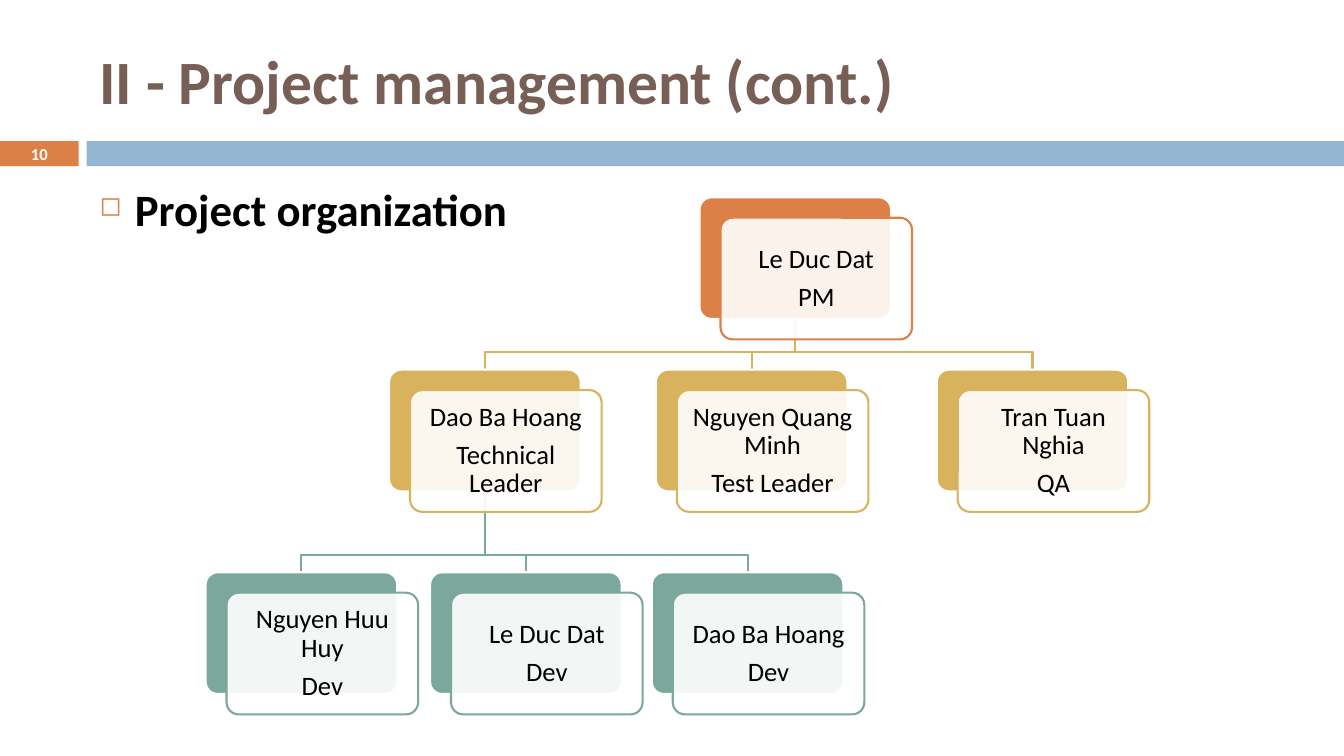
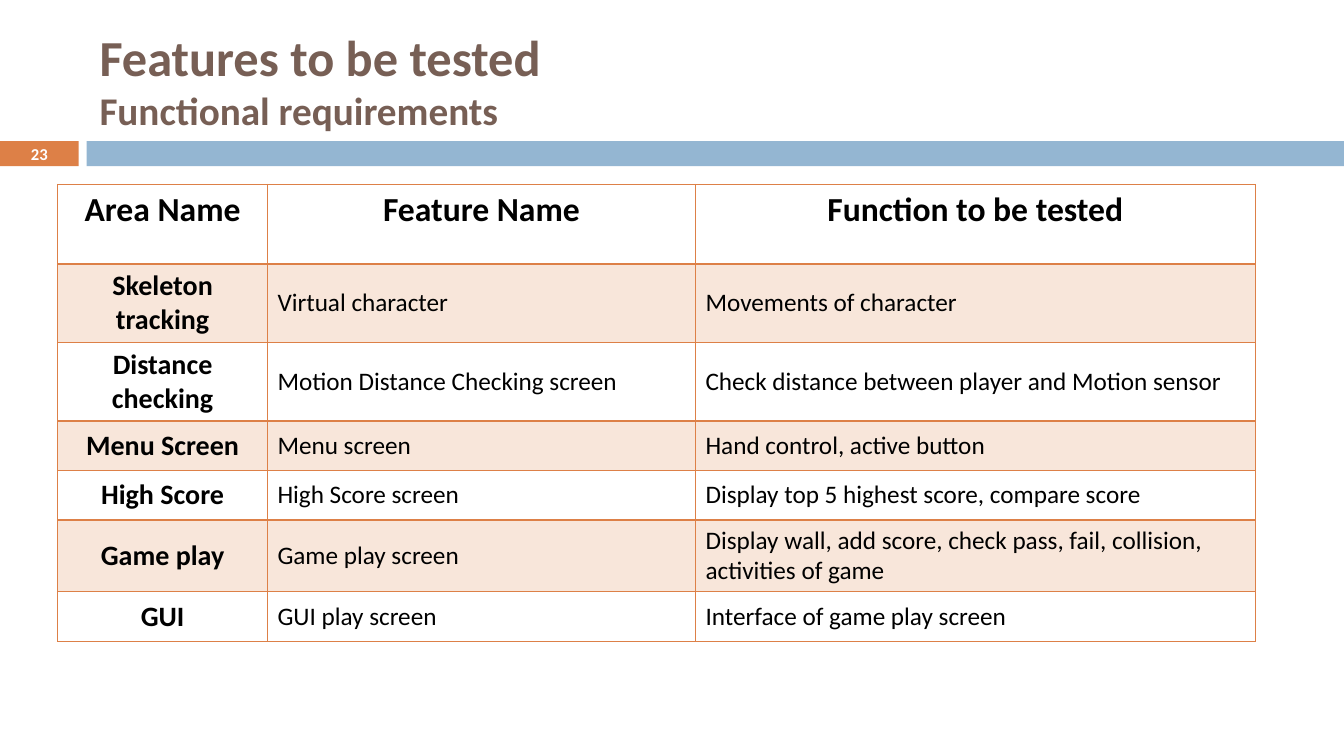
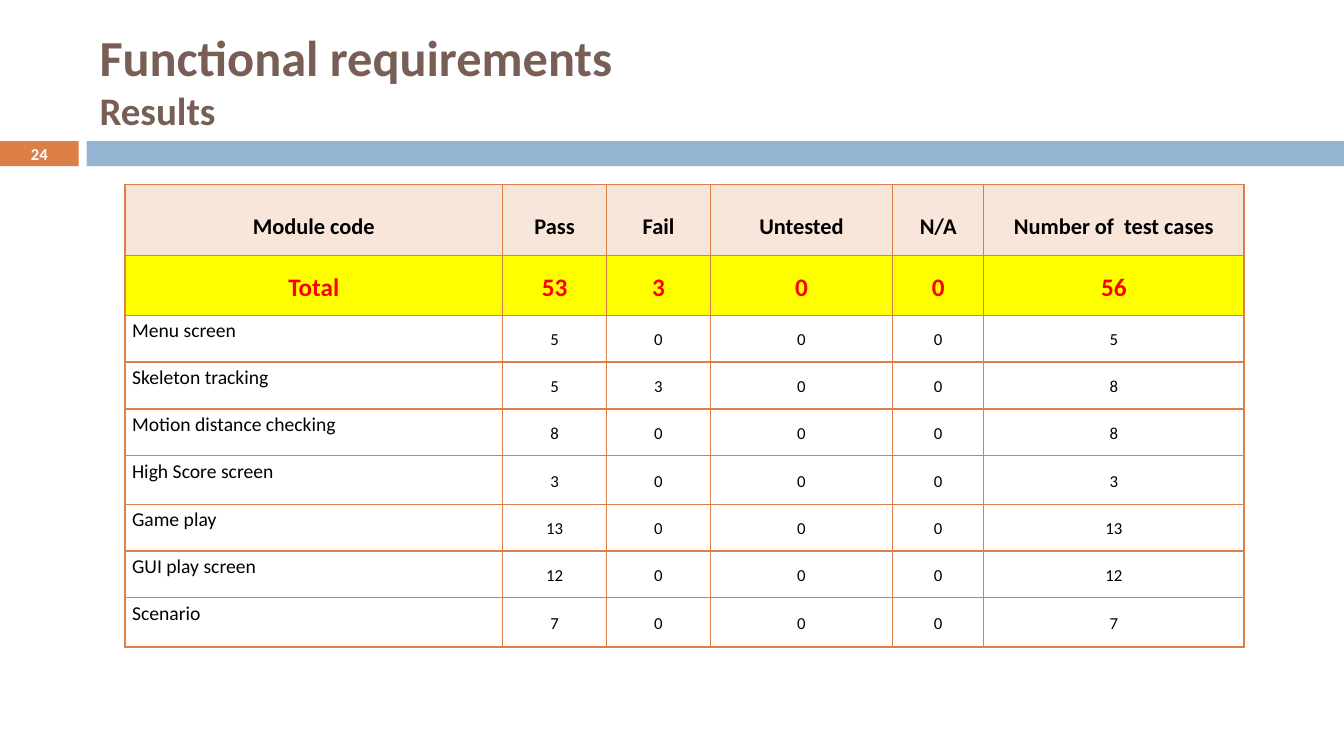
from lxml.etree import SubElement
from pptx import Presentation
from pptx.dml.color import RGBColor
from pptx.enum.shapes import MSO_SHAPE as Preset
from pptx.enum.text import MSO_ANCHOR as Anchor, PP_ALIGN as Align
from pptx.oxml.ns import qn
from pptx.util import Inches, Pt

WIDTH, HEIGHT = Inches(13.33), Inches(7.5)
FONT = "Calibri"
COLORS = {
    "accent": "DD8047", "band": "94B6D2", "title": "775F55", "gold": "D8B25C",
    "green": "7BA79D", "white": "FFFFFF", "black": "000000", "peach": "F8E6DA",
    "yellow": "FFFF00", "red": "FF0000",
}

TITLE_LEFT, TITLE_WIDTH = 6.67, 89.2
BAND_TOP, BAND_HEIGHT = 18.67, 3.33
BADGE_WIDTH, BAND_LEFT = 5.85, 6.45
TABLE_TOP = 24.4

CARD_WIDTH, CARD_HEIGHT = 14.25, 16.1
CARD_SHIFT_X, CARD_SHIFT_Y = 1.56, 2.7
LINK_DROP = 2.3
LEVELS = [(26.1, "accent"), (48.9, "gold"), (75.7, "green")]
MEMBERS = [
    ("Le Duc Dat", "PM", 0, 52.05, None),
    ("Dao Ba Hoang", "Technical Leader", 1, 28.95, 0),
    ("Nguyen Quang Minh", "Test Leader", 1, 48.8, 0),
    ("Tran Tuan Nghia", "QA", 1, 69.7, 0),
    ("Nguyen Huu Huy", "Dev", 2, 15.3, 1),
    ("Le Duc Dat", "Dev", 2, 32, 1),
    ("Dao Ba Hoang", "Dev", 2, 48.5, 1),
]

FEATURES = [
    ("Area Name", "Feature Name", "Function to be tested"),
    ("Skeleton tracking", "Virtual character", "Movements of character"),
    ("Distance checking", "Motion Distance Checking screen",
     "Check distance between player and Motion sensor"),
    ("Menu Screen", "Menu screen", "Hand control, active button"),
    ("High Score", "High Score screen", "Display top 5 highest score, compare score"),
    ("Game play", "Game play screen",
     "Display wall, add score, check pass, fail, collision, activities of game"),
    ("GUI", "GUI play screen", "Interface of game play screen"),
]
RESULTS = [
    ("Module code", "Pass", "Fail", "Untested", "N/A", "Number of  test cases"),
    ("Total", 53, 3, 0, 0, 56),
    ("Menu screen", 5, 0, 0, 0, 5),
    ("Skeleton tracking", 5, 3, 0, 0, 8),
    ("Motion distance checking", 8, 0, 0, 0, 8),
    ("High Score screen", 3, 0, 0, 0, 3),
    ("Game play", 13, 0, 0, 0, 13),
    ("GUI play screen", 12, 0, 0, 0, 12),
    ("Scenario", 7, 0, 0, 0, 7),
]


def across(percent):
    return round(WIDTH * percent / 100)


def down(percent):
    return round(HEIGHT * percent / 100)


def area(left, top, width, height):
    return across(left), down(top), across(width), down(height)


def rgb(name):
    return RGBColor.from_string(COLORS[name])


def style_run(run, size, color="black", bold=False):
    run.font.name = FONT
    run.font.size = Pt(size)
    run.font.bold = bold
    run.font.color.rgb = rgb(color)


def add_box(slide, preset, place, fill, line=None):
    box = slide.shapes.add_shape(preset, *area(*place))
    box.shadow.inherit = False
    box.fill.solid()
    box.fill.fore_color.rgb = rgb(fill)
    if line:
        box.line.color.rgb = rgb(line)
        box.line.width = Pt(1.5)
    else:
        box.line.fill.background()
    return box


def add_text(slide, place, text, sizes, color, anchor=Anchor.TOP, align=Align.LEFT):
    frame = slide.shapes.add_textbox(*area(*place)).text_frame
    frame.word_wrap = True
    frame.vertical_anchor = anchor
    paragraph = frame.paragraphs[0]
    paragraph.text = text
    paragraph.alignment = align
    for run, size in zip(paragraph.runs, sizes):
        style_run(run, size, color, bold=True)
    return paragraph


def add_page(deck, number, title, sizes):
    slide = deck.slides.add_slide(deck.slide_layouts[6])
    add_box(slide, Preset.RECTANGLE, (0, BAND_TOP, BADGE_WIDTH, BAND_HEIGHT), "accent")
    add_box(slide, Preset.RECTANGLE,
            (BAND_LEFT, BAND_TOP, 100 - BAND_LEFT, BAND_HEIGHT), "band")
    add_text(slide, (TITLE_LEFT, 3.33, TITLE_WIDTH, 14.4), title, sizes, "title",
             Anchor.MIDDLE)
    add_text(slide, (0, 18.5, BADGE_WIDTH, 3.6), str(number), [11.9], "white",
             Anchor.MIDDLE, Align.CENTER)
    return slide


def add_bullet(slide, text):
    paragraph = add_text(slide, (TITLE_LEFT, 23.33, TITLE_WIDTH, 65.6), text, [32], "black")
    paragraph.space_before = Pt(7)
    props = paragraph._p.get_or_add_pPr()
    props.set("marL", str(Inches(0.35)))
    props.set("indent", str(-Inches(0.35)))
    tint = SubElement(props, qn("a:buClr"))
    SubElement(tint, qn("a:srgbClr"), val=COLORS["accent"])
    SubElement(props, qn("a:buSzPct"), val="60000")
    SubElement(props, qn("a:buChar"), char="◻")


def add_link(slide, parent, child):
    start_x, end_x = (across(member[3] + CARD_WIDTH / 2) for member in (parent, child))
    start_y = down(LEVELS[parent[2]][0] + CARD_HEIGHT)
    top, color = LEVELS[child[2]]
    joint = down(top - LINK_DROP)
    outline = slide.shapes.build_freeform(start_x, start_y)
    outline.add_line_segments(
        [(start_x, joint), (end_x, joint), (end_x, down(top))], close=False)
    link = outline.convert_to_shape()
    link.shadow.inherit = False
    link.fill.background()
    link.line.color.rgb = rgb(color)
    link.line.width = Pt(1.5)


def add_card(slide, member):
    name, role, level, left, _ = member
    top, color = LEVELS[level]
    back = add_box(slide, Preset.ROUNDED_RECTANGLE,
                   (left, top, CARD_WIDTH, CARD_HEIGHT), color, "white")
    front = add_box(slide, Preset.ROUNDED_RECTANGLE,
                    (left + CARD_SHIFT_X, top + CARD_SHIFT_Y, CARD_WIDTH, CARD_HEIGHT),
                    "white", color)
    for card in (back, front):
        card.adjustments[0] = 0.1
    tint = front._element.spPr.find(qn("a:solidFill"))[0]
    SubElement(tint, qn("a:alpha"), val="90000")
    frame = front.text_frame
    frame.word_wrap = True
    frame.vertical_anchor = Anchor.MIDDLE
    frame.margin_left = frame.margin_right = Inches(0.08)
    frame.margin_top = frame.margin_bottom = Inches(0.08)
    frame.text = f"{name}\n{role}"
    for paragraph in frame.paragraphs:
        paragraph.alignment = Align.CENTER
        paragraph.line_spacing = 0.9
        paragraph.space_after = Pt(6.65)
        style_run(paragraph.runs[0], 19)


def add_borders(cell, bottom):
    props = cell._tc.get_or_add_tcPr()
    for side, points in (("L", 1), ("R", 1), ("T", 1), ("B", bottom)):
        edge = SubElement(props, qn(f"a:ln{side}"), w=str(Pt(points)))
        fill = SubElement(edge, qn("a:solidFill"))
        SubElement(fill, qn("a:srgbClr"), val=COLORS["accent"])


def fill_cell(cell, value, size, color="black", bold=False, fill=None, align=Align.CENTER,
              anchor=Anchor.MIDDLE, spacing=None, tight=False, bottom=1):
    add_borders(cell, bottom)
    if fill:
        cell.fill.solid()
        cell.fill.fore_color.rgb = rgb(fill)
    else:
        cell.fill.background()
    if tight:
        cell.margin_left = cell.margin_right = Inches(0.07)
        cell.margin_top = cell.margin_bottom = 0
    cell.vertical_anchor = anchor
    paragraph = cell.text_frame.paragraphs[0]
    paragraph.text = str(value)
    paragraph.alignment = align
    if spacing:
        paragraph.line_spacing = spacing
    style_run(paragraph.runs[0], size, color, bold)


def add_grid(slide, left, columns, rows, content, cell_style):
    place = area(left, TABLE_TOP, sum(columns), sum(rows))
    table = slide.shapes.add_table(len(rows), len(columns), *place).table
    table.first_row = table.horz_banding = False
    for column, width in zip(table.columns, columns):
        column.width = across(width)
    for row, height in zip(table.rows, rows):
        row.height = down(height)
    for r, values in enumerate(content):
        for c, value in enumerate(values):
            fill_cell(table.cell(r, c), value, **cell_style(r, c))


def feature_style(row, column):
    if row == 0:
        return dict(size=24, bold=True, anchor=Anchor.TOP, bottom=2)
    fill = "peach" if row % 2 else None
    if column == 0:
        return dict(size=20, bold=True, fill=fill)
    return dict(size=18, fill=fill, align=Align.LEFT)


def result_style(row, column):
    if row == 0:
        return dict(size=16, bold=True, fill="peach", spacing=1.5, tight=True)
    shared = dict(spacing=1.15, tight=True)
    if row == 1:
        return dict(size=18, color="red", bold=True, fill="yellow", **shared)
    if column == 0:
        return dict(size=14, align=Align.LEFT, anchor=Anchor.TOP, **shared)
    return dict(size=12, **shared)


def main():
    deck = Presentation()
    deck.slide_width, deck.slide_height = WIDTH, HEIGHT

    organization = add_page(deck, 10, "II - Project management (cont.)", [44])
    add_bullet(organization, "Project organization")
    for member in MEMBERS:
        if member[4] is not None:
            add_link(organization, MEMBERS[member[4]], member)
    for member in MEMBERS:
        add_card(organization, member)

    features = add_page(deck, 23, "Features to be tested\vFunctional requirements", [36, 28])
    add_grid(features, 4.3, [15.6, 31.85, 41.65],
             [10.5, 10.4, 10.4, 6.55, 6.55, 9.5, 6.55], FEATURES, feature_style)

    results = add_page(deck, 24, "Functional requirements\vResults", [36, 27.9])
    add_grid(results, 9.3, [28.1, 7.73, 7.73, 13.55, 6.8, 19.35],
             [9.4, 7.9, 6.2, 6.2, 6.2, 6.4, 6.2, 6.2, 6.5], RESULTS, result_style)

    deck.save("out.pptx")


if __name__ == "__main__":
    main()
